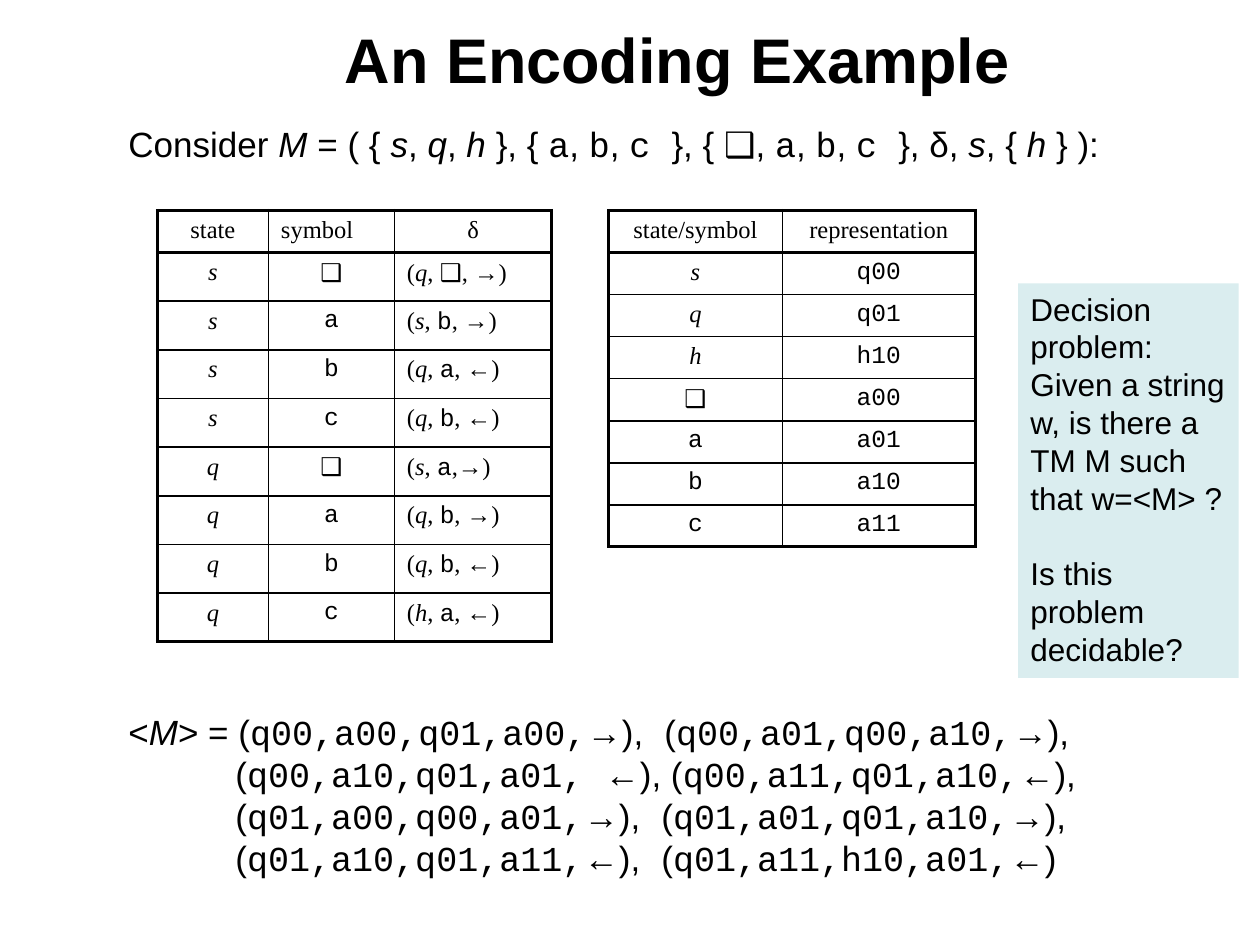
import pptx
import pptx.util
import pptx.dml.color
import pptx.enum.shapes
import pptx.enum.text
from lxml import etree
from pptx.util import Inches

COLORS = {"text": "000000", "border": "000000", "note": "DAEDEF"}
SANS, SERIF, MONO = "Arial", "Times New Roman", "Courier New"
LEFT, CENTER = pptx.enum.text.PP_ALIGN.LEFT, pptx.enum.text.PP_ALIGN.CENTER
THIN, THICK = 1, 2

# Inline marks: *italic*, `code`, ~sans~
MARKS = {"*": {"italic": True}, "`": {"font": MONO}, "~": {"font": SANS}}

TRANSITIONS = [
    ("state", "symbol", "δ"),
    ("*s*", "~❑~", "(*q*, ~❑~, →)"),
    ("*s*", "`a`", "(*s*, `b`, →)"),
    ("*s*", "`b`", "(*q*, `a`, ←)"),
    ("*s*", "`c`", "(*q*, `b`, ←)"),
    ("*q*", "~❑~", "(*s*, `a`,→)"),
    ("*q*", "`a`", "(*q*, `b`, →)"),
    ("*q*", "`b`", "(*q*, `b`, ←)"),
    ("*q*", "`c`", "(*h*, `a`, ←)"),
]
CODES = [
    ("state/symbol", "representation"),
    ("*s*", "`q00`"),
    ("*q*", "`q01`"),
    ("*h*", "`h10`"),
    ("~❑~", "`a00`"),
    ("`a`", "`a01`"),
    ("`b`", "`a10`"),
    ("`c`", "`a11`"),
]
MACHINE = ("Consider *M* = ( { *s*, *q*, *h *}, { `a`, `b`, `c `}, "
           "{ ❑, `a`, `b`, `c `}, δ, *s*, { *h *} ):")
ENCODING = [
    "<*M*> = (`q00,a00,q01,a00,`→),` `(`q00,a01,q00,a10,`→),",
    "(`q00,a10,q01,a01, `←), (`q00,a11,q01,a10,`←),",
    "(`q01,a00,q00,a01,`→),` `(`q01,a01,q01,a10,`→),",
    "(`q01,a10,q01,a11,`←),` `(`q01,a11,h10,a01,`←)",
]


def rgb(name):
    return pptx.dml.color.RGBColor.from_string(COLORS[name])


def add_run(paragraph, text, size, font=SANS, bold=False, italic=False):
    run = paragraph.add_run()
    run.text = text
    run.font.size = pptx.util.Pt(size)
    run.font.name = font
    run.font.bold = bold
    run.font.italic = italic
    run.font.color.rgb = rgb("text")


def write(frame, text, align=LEFT, before=0, indent=0, **style):
    """Add a paragraph of marked text, filling the empty first one."""
    paragraph = frame.paragraphs[0]
    if paragraph.runs:
        paragraph = frame.add_paragraph()
    paragraph.alignment = align
    if before:
        paragraph.space_before = pptx.util.Pt(before)
    if indent:
        paragraph._p.get_or_add_pPr().set("marL", str(Inches(indent)))
    piece, mark = "", None
    for char in text:
        if char in MARKS:
            if piece:
                add_run(paragraph, piece, **{**style, **MARKS.get(mark, {})})
            piece, mark = "", None if char == mark else char
        else:
            piece += char
    if piece:
        add_run(paragraph, piece, **style)


def add_text_box(slide, left, top, width, height):
    frame = slide.shapes.add_textbox(
        Inches(left), Inches(top), Inches(width), Inches(height)).text_frame
    frame.word_wrap = True
    return frame


def set_borders(cell, **widths):
    properties = cell._tc.get_or_add_tcPr()
    for position, (side, width) in enumerate(widths.items()):
        line = etree.fromstring(
            '<a:{0} xmlns:a="http://schemas.openxmlformats.org/drawingml/2006/main" '
            'w="{1}"><a:solidFill><a:srgbClr val="{2}"/></a:solidFill></a:{0}>'
            .format(side, pptx.util.Pt(width), COLORS["border"]))
        properties.insert(position, line)


def add_grid(slide, rows, left, top, col_widths, row_heights, aligns):
    """Table with a thick frame, a thick rule under its header, thin lines inside."""
    table = slide.shapes.add_table(
        len(rows), len(col_widths), Inches(left), Inches(top),
        Inches(sum(col_widths)), Inches(sum(row_heights))).table
    table.first_row = table.horz_banding = False
    for column, width in zip(table.columns, col_widths):
        column.width = Inches(width)
    last_row, last_col = len(rows) - 1, len(col_widths) - 1
    for r, (row, height) in enumerate(zip(rows, row_heights)):
        table.rows[r].height = Inches(height)
        for c, text in enumerate(row):
            cell = table.cell(r, c)
            cell.fill.background()
            align = CENTER if text == "δ" else aligns[c]
            if text == "symbol":
                align = LEFT
            write(cell.text_frame, text, align=align, size=14, font=SERIF)
            set_borders(cell,
                        lnL=THICK if c == 0 else THIN,
                        lnR=THICK if c == last_col else THIN,
                        lnT=THICK if r in (0, 1) else THIN,
                        lnB=THICK if r in (0, last_row) else THIN)


def add_note(slide, left, top, width, height, paragraphs):
    note = slide.shapes.add_shape(
        pptx.enum.shapes.MSO_SHAPE.RECTANGLE,
        Inches(left), Inches(top), Inches(width), Inches(height))
    note.shadow.inherit = False
    note.fill.solid()
    note.fill.fore_color.rgb = rgb("note")
    note.line.fill.background()
    frame = note.text_frame
    frame.word_wrap = True
    frame.vertical_anchor = pptx.enum.text.MSO_ANCHOR.TOP
    for i, text in enumerate(paragraphs):
        write(frame, text, size=18, before=21.5 if i else 0)


def main():
    deck = pptx.Presentation()
    deck.slide_width, deck.slide_height = Inches(10), Inches(7.5)
    slide = deck.slides.add_slide(deck.slide_layouts[6])

    # Title
    title = add_text_box(slide, 0.75, 0, 9.25, 0.92)
    title.vertical_anchor = pptx.enum.text.MSO_ANCHOR.MIDDLE
    write(title, "An Encoding Example", align=CENTER, size=36, bold=True)

    # Machine definition, and its encoding below the tables
    body = add_text_box(slide, 0.92, 0.92, 8.42, 6.1)
    write(body, MACHINE, size=20)
    for i, line in enumerate(ENCODING):
        write(body, line, size=20, before=0 if i else 312,
              indent=0.85 if i else 0)

    # Transition table and code table
    add_grid(slide, TRANSITIONS, 1.25, 1.67, [0.88, 1, 1.25],
             [0.33] + [3.09 / 8] * 8, [CENTER, CENTER, LEFT])
    add_grid(slide, CODES, 4.83, 1.67, [1.38, 1.53],
             [2.67 / 8] * 8, [CENTER, CENTER])

    # Question beside the tables
    add_note(slide, 8.08, 2.25, 1.75, 3.13, [
        "Decision problem: Given a string w, is there a TM M such that w=<M> ?",
        "Is this problem decidable?"])

    deck.save("out.pptx")


if __name__ == "__main__":
    main()
